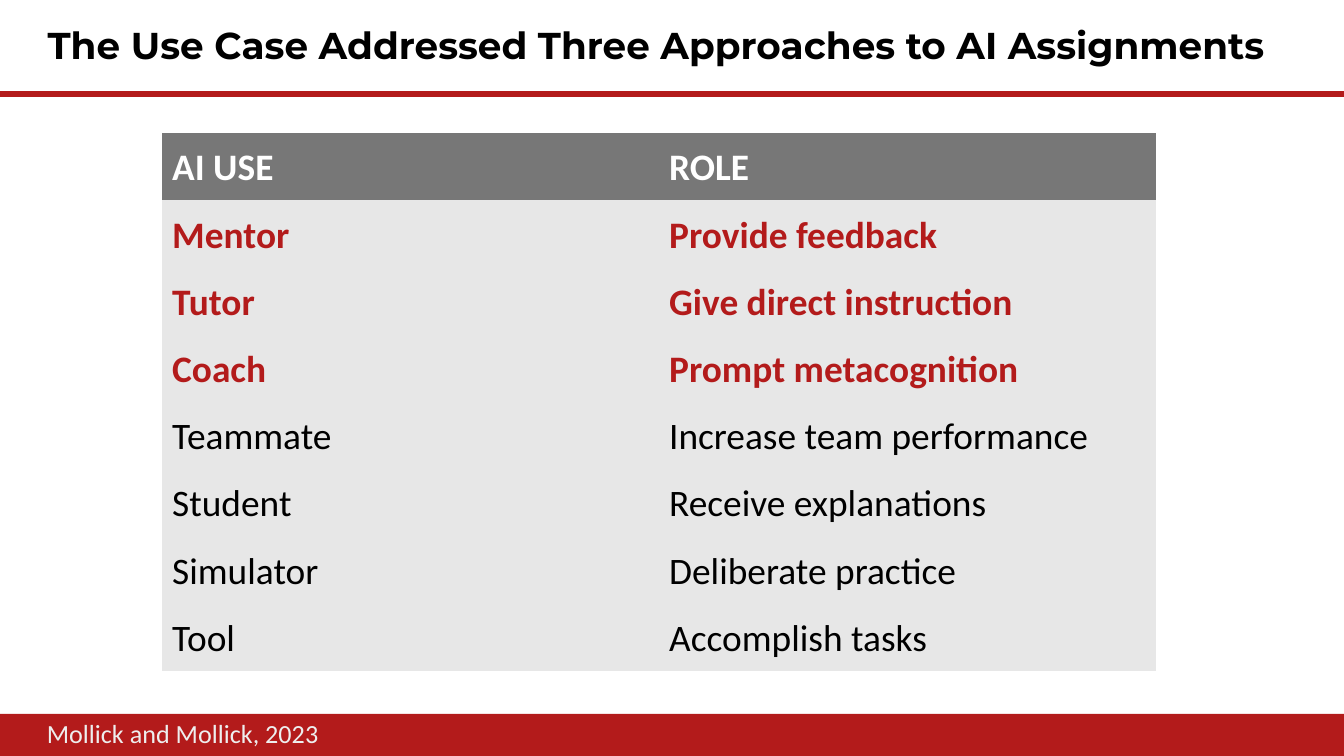
from pptx import Presentation
from pptx.dml.color import RGBColor
from pptx.enum.shapes import MSO_CONNECTOR as CONN, MSO_SHAPE as SHAPE
from pptx.enum.text import MSO_ANCHOR as ANCHOR, MSO_AUTO_SIZE as FIT, PP_ALIGN as ALIGN
from pptx.oxml.ns import qn
from pptx.util import Pt
from lxml.etree import SubElement

PX = 9525
RED = RGBColor(0xB3, 0x1B, 0x1B)
GRAY = RGBColor(0x77, 0x77, 0x77)
PALE = RGBColor(0xE7, 0xE7, 0xE7)
MIST = RGBColor(0xEE, 0xEE, 0xEE)
WHITE = RGBColor(0xFF, 0xFF, 0xFF)
BLACK = RGBColor(0, 0, 0)

ROLES = [
    ("AI USE", "ROLE"),
    ("Mentor", "Provide feedback"),
    ("Tutor", "Give direct instruction"),
    ("Coach", "Prompt metacognition"),
    ("Teammate", "Increase team performance"),
    ("Student", "Receive explanations"),
    ("Simulator", "Deliberate practice"),
    ("Tool", "Accomplish tasks"),
]
ADDRESSED = ("Mentor", "Tutor", "Coach")


def px(*lengths):
    return [n * PX for n in lengths]


def write(tf, text, size=20, font="Calibri", color=BLACK, bold=False, spacing=None):
    p = tf.paragraphs[0]
    p.alignment = ALIGN.LEFT
    if spacing:
        p.line_spacing = spacing
    r = p.add_run()
    r.text = text
    r.font.size = Pt(size)
    r.font.name = font
    r.font.bold = bold
    r.font.color.rgb = color


class Deck:
    """Holds the presentation, its current slide and the shared style."""

    def __init__(self, width, height):
        self.prs = Presentation()
        self.prs.slide_width, self.prs.slide_height = px(width, height)
        self.s = self.prs.slides.add_slide(self.prs.slide_layouts[5])

    def bar(self, x, y, w, h, color):
        sp = self.s.shapes.add_shape(SHAPE.RECTANGLE, *px(x, y, w, h))
        sp.shadow.inherit = False
        sp.fill.solid()
        sp.fill.fore_color.rgb = color
        sp.line.fill.background()

    def rule(self, x1, y1, x2, y2, color, weight):
        sp = self.s.shapes.add_connector(CONN.STRAIGHT, *px(x1, y1, x2, y2))
        sp.line.color.rgb = color
        sp.line.width = Pt(weight)
        SubElement(sp._element.spPr, qn("a:effectLst"))

    def title(self, text, x, y, w, h, inset):
        sp = self.s.shapes.title
        sp.left, sp.top, sp.width, sp.height = px(x, y, w, h)
        tf = sp.text_frame
        tf.auto_size = FIT.NONE
        tf.vertical_anchor = ANCHOR.TOP
        tf.margin_left, tf.margin_top, tf.margin_right, tf.margin_bottom = px(*[inset] * 4)
        write(tf, text, font="Montserrat", bold=True)

    def text(self, text, x, y, w, h, **style):
        tf = self.s.shapes.add_textbox(*px(x, y, w, h)).text_frame
        tf.word_wrap = True
        tf.auto_size = FIT.SHAPE_TO_FIT_TEXT
        write(tf, text, **style)

    def table(self, rows, x, y, w, h):
        table = self.s.shapes.add_table(len(rows), len(rows[0]), *px(x, y, w, h)).table
        for i, row in enumerate(rows):
            color = WHITE if i == 0 else RED if row[0] in ADDRESSED else BLACK
            for j, text in enumerate(row):
                cell = table.cell(i, j)
                cell.fill.solid()
                cell.fill.fore_color.rgb = PALE if i else GRAY
                cell.vertical_anchor = ANCHOR.MIDDLE
                cell.margin_left, cell.margin_right = px(7, 7)
                cell.margin_top = cell.margin_bottom = 0
                write(cell.text_frame, text, color=color, bold=color != BLACK, spacing=1.07)
        properties = table._tbl.tblPr
        properties.find(qn("a:tableStyleId")).text = "{2D5ABB26-0587-4C30-8999-92F81FD0307C}"


def main():
    deck = Deck(960, 540)
    deck.bar(0, 510, 960, 30, RED)
    deck.rule(960, 67, -1, 67, RED, 3)
    deck.title("The Use Case Addressed Three Approaches to AI Assignments", 24, 6, 927, 60, inset=10)
    deck.text("Mollick and Mollick, 2023", 24, 508, 415, 33, size=14, color=MIST)
    deck.table(ROLES, 116, 95, 710, 384)
    deck.prs.save("out.pptx")


if __name__ == "__main__":
    main()
